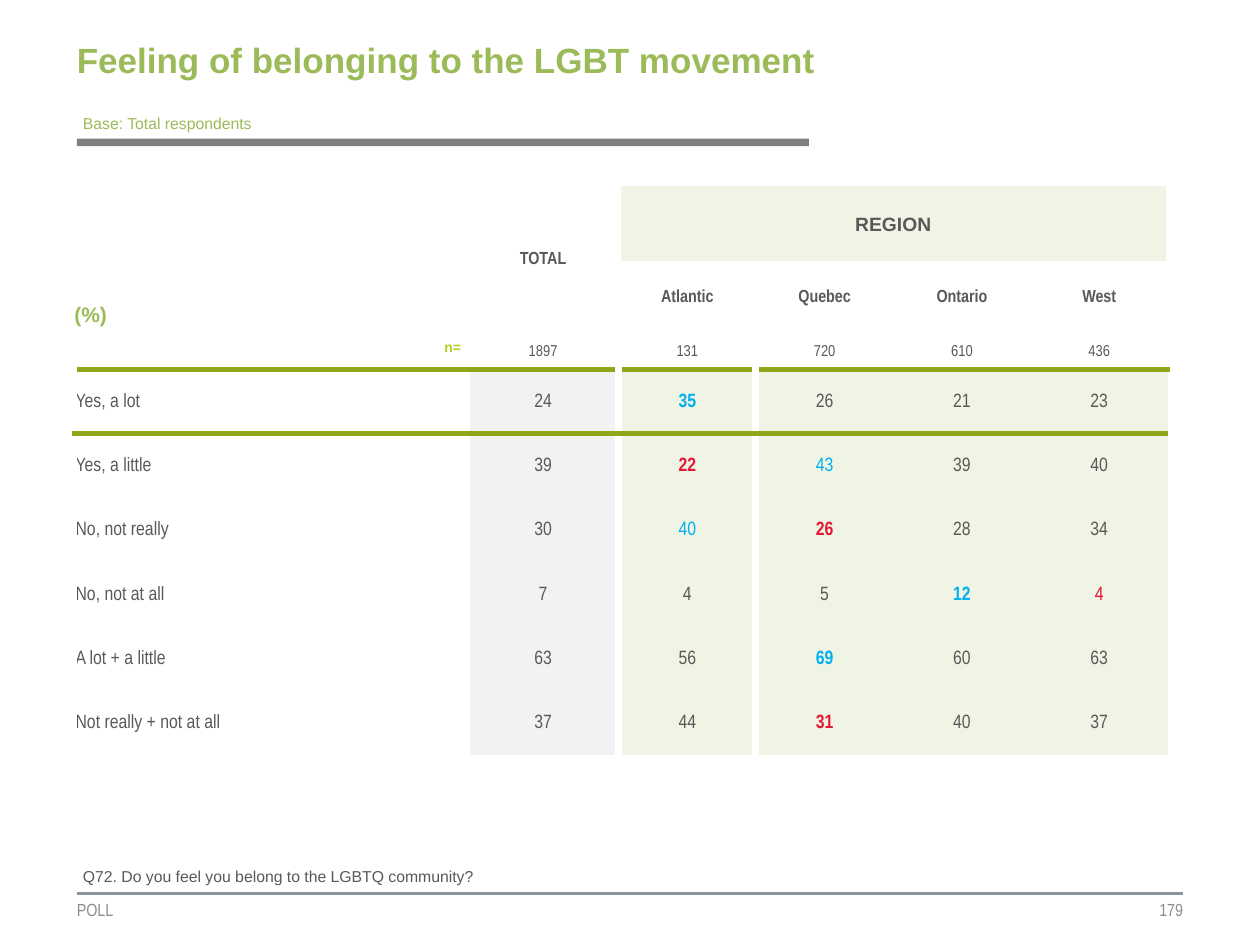
from dataclasses import dataclass

from lxml import etree
from pptx import Presentation
from pptx.dml.color import RGBColor
from pptx.enum import shapes, text
from pptx.oxml import ns
from pptx.util import Inches, Pt


@dataclass(frozen=True)
class Theme:
    font: str = "Arial"
    narrow: str = "Arial Narrow"
    green: str = "9BBB59"
    lime: str = "B5CC22"
    rule_green: str = "91A51B"
    pale_green: str = "EFF4E4"
    pale_gray: str = "F2F2F2"
    bar_gray: str = "7F7F7F"
    footer_rule: str = "88959E"
    footer_text: str = "8C8C8C"
    dark: str = "595959"
    high: str = "00B0F0"
    low: str = "E31836"
    white: str = "FFFFFF"
    title_size: int = 20
    unit_size: int = 12
    body_size: int = 11
    head_size: int = 10
    small_size: int = 9
    tiny_size: int = 8


theme = Theme()
LEFT, CENTER, RIGHT = text.PP_ALIGN.LEFT, text.PP_ALIGN.CENTER, text.PP_ALIGN.RIGHT
NO_STYLE = "{2D5ABB26-0587-4C30-8999-92F81FD0307C}"


def write(frame, words, size, color, name=theme.font, bold=False, align=LEFT):
    paragraph = frame.paragraphs[0]
    paragraph.text = words
    paragraph.alignment = align
    paragraph.font.size = Pt(size)
    paragraph.font.name = name
    paragraph.font.bold = bold
    paragraph.font.color.rgb = RGBColor.from_string(color)
    return paragraph


def set_border(cell, side, color, width):
    properties = cell._tc.get_or_add_tcPr()
    line = etree.SubElement(properties, ns.qn(f"a:ln{side}"), w=str(Pt(width)))
    fill = etree.SubElement(line, ns.qn("a:solidFill"))
    etree.SubElement(fill, ns.qn("a:srgbClr"), val=color)


presentation = Presentation()
presentation.slide_width = Inches(10)
presentation.slide_height = Inches(7.5)
slide = presentation.slides.add_slide(presentation.slide_layouts[5])

title = slide.shapes.title
title.left, title.top, title.width, title.height = map(Inches, (0.61, 0.13, 6.48, 0.69))
frame = title.text_frame
frame.margin_left = frame.margin_top = frame.margin_right = frame.margin_bottom = 0
frame.vertical_anchor = text.MSO_ANCHOR.MIDDLE
write(frame, "Feeling of belonging to the LGBT movement", theme.title_size, theme.green, bold=True)

footer_line = slide.shapes.add_connector(
    shapes.MSO_CONNECTOR.STRAIGHT, Inches(0.61), Inches(7.09), Inches(9.39), Inches(7.09))
footer_line.line.color.rgb = RGBColor.from_string(theme.footer_rule)
footer_line.line.width = Pt(1.5)
etree.SubElement(footer_line._element.spPr, ns.qn("a:effectLst"))

title_bar = slide.shapes.add_shape(
    shapes.MSO_SHAPE.RECTANGLE, Inches(0.61), Inches(1.1), Inches(5.81), Inches(0.06))
title_bar.shadow.inherit = False
title_bar.fill.solid()
title_bar.fill.fore_color.rgb = RGBColor.from_string(theme.bar_gray)
title_bar.line.fill.background()

for words, left, width, align in (("POLL", 0.61, 2.8, LEFT), ("179", 6.55, 2.84, RIGHT)):
    footer = slide.shapes.add_textbox(Inches(left), Inches(7.09), Inches(width), Inches(0.26))
    frame = footer.text_frame
    frame.word_wrap = True
    frame.margin_left = frame.margin_top = frame.margin_right = frame.margin_bottom = 0
    frame.vertical_anchor = text.MSO_ANCHOR.MIDDLE
    write(frame, words, theme.head_size, theme.footer_text, theme.narrow, align=align)

for words, top, width, color, wrap in (
    ("Base: Total respondents", 0.85, 1.56, theme.green, False),
    ("Q72. Do you feel you belong to the LGBTQ community?", 6.83, 8.55, theme.dark, True),
):
    note = slide.shapes.add_textbox(Inches(0.56), Inches(top), Inches(width), Inches(0.25))
    note.text_frame.word_wrap = wrap
    note.text_frame.auto_size = text.MSO_AUTO_SIZE.SHAPE_TO_FIT_TEXT
    write(note.text_frame, words, theme.small_size, color)

rows = [
    ["", "TOTAL", "REGION", "", "", ""],
    ["(%)", "", "", "", "", ""],
    ["", "", "Atlantic", "Quebec", "Ontario", "West"],
    ["n=", "1897", "131", "720", "610", "436"],
    ["Yes, a lot", "24", "35", "26", "21", "23"],
    ["Yes, a little", "39", "22", "43", "39", "40"],
    ["No, not really", "30", "40", "26", "28", "34"],
    ["No, not at all", "7", "4", "5", "12", "4"],
    ["A lot + a little", "63", "56", "69", "60", "63"],
    ["Not really + not at all", "37", "44", "31", "40", "37"],
]
highlights = {
    (4, 2): (theme.high, True), (5, 2): (theme.low, True), (5, 3): (theme.high, False),
    (6, 2): (theme.high, False), (6, 3): (theme.low, True), (7, 4): (theme.high, True),
    (7, 5): (theme.low, False), (8, 3): (theme.high, True), (9, 3): (theme.low, True),
}
header_styles = {
    (0, 2): (theme.body_size, theme.dark, theme.font),
    (1, 0): (theme.unit_size, theme.green, theme.font),
    (3, 0): (theme.tiny_size, theme.lime, theme.font),
}
column_widths = [3.12, 1.2] + [1.09] * 4
row_heights = [0.4, 0.18, 0.57, 0.29] + [0.51] * 6
size_row, first_data_row = 3, 4

table_shape = slide.shapes.add_table(
    len(rows), len(column_widths), Inches(0.59), Inches(1.48),
    Inches(sum(column_widths)), Inches(sum(row_heights)))
table = table_shape.table
table.first_row = table.horz_banding = False
table._tbl.tblPr.find(ns.qn("a:tableStyleId")).text = NO_STYLE
for column, width in zip(table.columns, column_widths):
    column.width = Inches(width)
for row, height in zip(table.rows, row_heights):
    row.height = Inches(height)

for r, values in enumerate(rows):
    for c, words in enumerate(values):
        cell = table.cell(r, c)
        is_data = r >= first_data_row
        is_unit = (r, c) in ((1, 0), (3, 0))
        cell.vertical_anchor = text.MSO_ANCHOR.BOTTOM if (r, c) == (1, 0) else text.MSO_ANCHOR.MIDDLE
        cell.margin_left = Inches(0 if is_unit else 0.01)
        cell.margin_right = Inches(0.05 if is_unit else 0.01)
        cell.margin_top = Inches(0 if is_unit else 0.01)
        cell.margin_bottom = Inches(0.05 if is_unit else 0)

        if is_data:
            size, name = theme.body_size, theme.narrow
            color, bold = highlights.get((r, c), (theme.dark, False))
        else:
            default_size = theme.small_size if r == size_row else theme.head_size
            size, color, name = header_styles.get((r, c), (default_size, theme.dark, theme.narrow))
            bold = r < size_row or c == 0
        align = CENTER if c else RIGHT if r == size_row else LEFT
        paragraph = write(cell.text_frame, words, size, color, name, bold, align)
        if is_unit:
            paragraph.line_spacing = 0.95

        if c == 2 or (c > 2 and not is_data) or (c == 1) or (c == 0 and is_data):
            set_border(cell, "L", theme.white, 4.5 if is_data and c == 2 else 3)
        if c < 2 or not is_data:
            set_border(cell, "R", theme.white, 4.5 if is_data and c == 1 else 3)
        if r == first_data_row:
            set_border(cell, "T", theme.rule_green, 3)
        if r == size_row:
            set_border(cell, "B", theme.rule_green, 3)

        if (is_data and c) or (r < 2 and c >= 2):
            cell.fill.solid()
            cell.fill.fore_color.rgb = RGBColor.from_string(
                theme.pale_gray if c == 1 else theme.pale_green)
        else:
            cell.fill.background()

for start, end in (((0, 1), (2, 1)), ((0, 2), (1, 5)), ((1, 0), (2, 0))):
    table.cell(*start).merge(table.cell(*end))

presentation.save("out.pptx")
